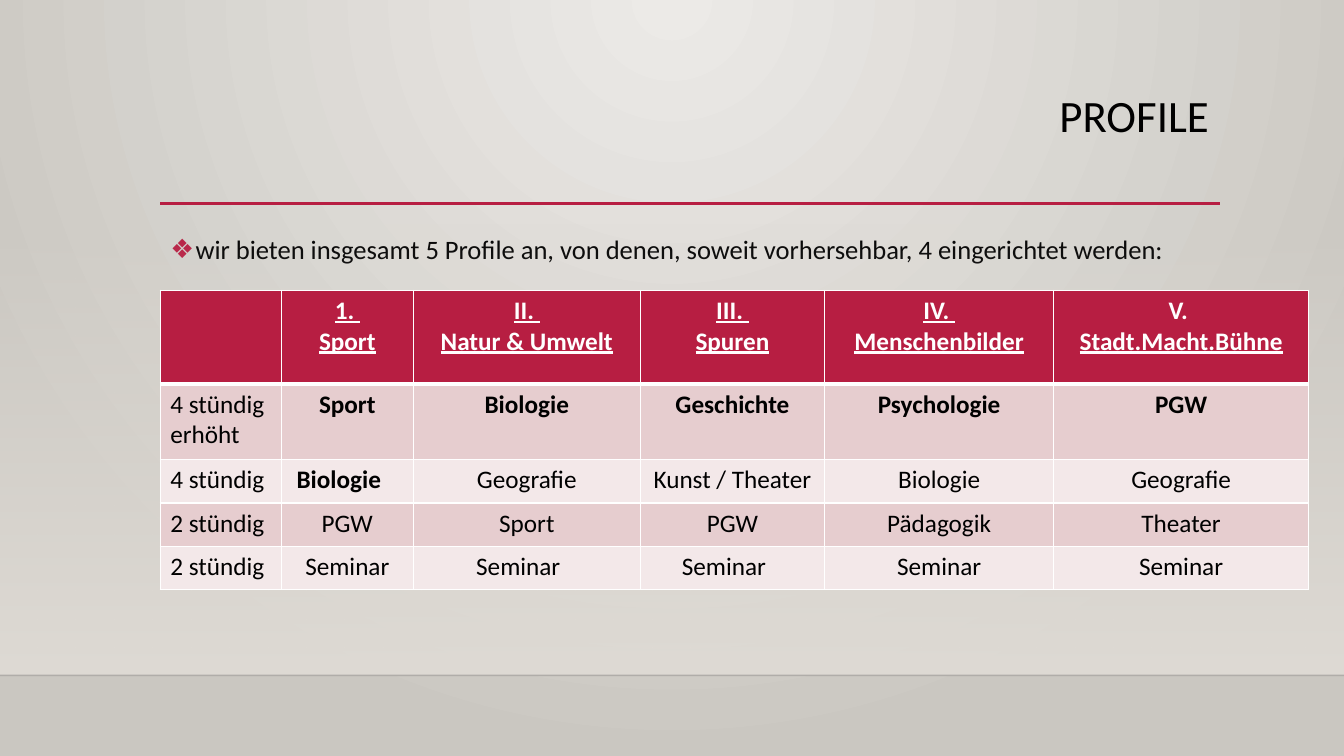
from lxml import etree
from pptx import Presentation
from pptx.dml.color import RGBColor
from pptx.enum.shapes import MSO_CONNECTOR, MSO_SHAPE
from pptx.enum.text import MSO_ANCHOR, MSO_AUTO_SIZE, PP_ALIGN
from pptx.oxml import parse_xml
from pptx.oxml.ns import nsdecls, qn
from pptx.util import Inches, Pt

STRAIGHT, RECT = MSO_CONNECTOR.STRAIGHT, MSO_SHAPE.RECTANGLE
TOP, NO_FIT = MSO_ANCHOR.TOP, MSO_AUTO_SIZE.NONE
LEFT, CENTER, RIGHT = PP_ALIGN.LEFT, PP_ALIGN.CENTER, PP_ALIGN.RIGHT

FONT = "Calibri"
RED, BLACK, WHITE = "B71E42", "000000", "FFFFFF"
BANDS = ["E6CDCF", "F3E8E9"]
WIDTH, HEIGHT, FLOOR = 13.33, 7.5, 6.7
MARGIN = 1.59

COLUMNS = [1.2, 1.31, 2.25, 1.83, 2.27, 2.53]
ROWS = [0.93, 0.75, 0.43, 0.43, 0.43]
PROFILES = [
    ["", "1. \nSport", "II. \nNatur & Umwelt", "III. \nSpuren",
     "IV. \nMenschenbilder", "V. \nStadt.Macht.Bühne"],
    ["4 stündig\nerhöht", "Sport", "Biologie", "Geschichte", "Psychologie", "PGW"],
    ["4 stündig", "Biologie", "Geografie", "Kunst / Theater", "Biologie", "Geografie"],
    ["2 stündig", "PGW", "Sport", "PGW", "Pädagogik", "Theater"],
    ["2 stündig"] + ["Seminar"] * 5,
]
SHIFTED_LEFT = {(2, 1), (4, 2), (4, 3)}


def rgb(color):
    return RGBColor.from_string(color)


def gradient(stops, direction):
    """Build a gradFill from (position, colour, opacity) stops in percent."""
    marks = "".join(
        f'<a:gs pos="{pos * 1000}"><a:srgbClr val="{color}">'
        f'<a:alpha val="{opacity * 1000}"/></a:srgbClr></a:gs>'
        for pos, color, opacity in stops)
    return parse_xml(f'<a:gradFill {nsdecls("a")} rotWithShape="1">'
                     f"<a:gsLst>{marks}</a:gsLst>{direction}</a:gradFill>")


def set_gradient(fill, holder, stops, direction):
    fill.gradient()
    holder.replace(holder.find(qn("a:gradFill")), gradient(stops, direction))


def add_run(p, text, size, color=BLACK, bold=False, underline=False):
    r = p.add_run()
    r.text = text
    r.font.name, r.font.size = FONT, Pt(size)
    r.font.bold, r.font.underline = bold, underline
    r.font.color.rgb = rgb(color)


def add_rule(s, x, y, width, color, weight, opacity=100):
    line = s.shapes.add_connector(STRAIGHT, Inches(x), Inches(y),
                                  Inches(x + width), Inches(y))
    line.line.color.rgb, line.line.width = rgb(color), Pt(weight)
    srgb = line.line._ln.find(".//" + qn("a:srgbClr"))
    etree.SubElement(srgb, qn("a:alpha"), val=str(opacity * 1000))
    etree.SubElement(line._element.spPr, qn("a:effectLst"))


def add_backdrop(s):
    fill = s.background.fill
    fill.solid()
    holder = s._element.cSld.find(qn("p:bg")).find(qn("p:bgPr"))
    set_gradient(fill, holder, [(0, "ECEAE7", 100), (100, "CAC7C1", 100)],
                 '<a:path path="circle"><a:fillToRect l="43000" t="0" '
                 'r="43000" b="100000"/></a:path>')
    wall = s.shapes.add_shape(RECT, 0, Inches(2.21), Inches(WIDTH), Inches(FLOOR - 2.21))
    wall.shadow.inherit = False
    wall.line.fill.background()
    set_gradient(wall.fill, wall._element.spPr,
                 [(0, "DFDBD5", 0), (100, "DFDBD5", 100)],
                 '<a:lin ang="5400000" scaled="0"/>')
    add_rule(s, 0, FLOOR, WIDTH, "000001", 1, opacity=20)


def place_text(sp, x, y, width, height):
    """Move a placeholder and return its first paragraph."""
    sp.left, sp.top, sp.width, sp.height = map(Inches, (x, y, width, height))
    tf = sp.text_frame
    tf.word_wrap, tf.auto_size, tf.vertical_anchor = True, NO_FIT, TOP
    p = tf.paragraphs[0]
    p.space_before = Pt(0)
    return p


def add_title(s, x, y, width, height):
    p = place_text(s.shapes.title, x, y, width, height)
    p.alignment, p.line_spacing = RIGHT, 0.9
    add_run(p, "PROFILE", 32)


def add_intro(s, x, y, width, height):
    p = place_text(s.placeholders[1], x, y, width, height)
    p.alignment, p.line_spacing = LEFT, 1.2
    pPr = p._p.get_or_add_pPr()
    pPr.set("marL", str(Inches(0.25)))
    pPr.set("indent", str(-Inches(0.25)))
    color = etree.SubElement(pPr, qn("a:buClr"))
    etree.SubElement(color, qn("a:srgbClr"), val=RED)
    etree.SubElement(pPr, qn("a:buChar"), char="❖")
    add_run(p, "wir bieten insgesamt 5 Profile an, von denen, soweit "
               "vorhersehbar, 4 eingerichtet werden:", 19)


def set_borders(cell, top, bottom):
    tcPr = cell._tc.get_or_add_tcPr()
    sides = [("L", 1), ("R", 1), ("T", top), ("B", bottom)]
    for i, (side, weight) in enumerate(sides):
        tcPr.insert(i, parse_xml(
            f'<a:ln{side} {nsdecls("a")} w="{Pt(weight)}"><a:solidFill>'
            f'<a:srgbClr val="{WHITE}"/></a:solidFill></a:ln{side}>'))


def fill_cell(cell, row, col, text):
    header = row == 0
    cell.fill.solid()
    cell.fill.fore_color.rgb = rgb(RED if header else BANDS[(row - 1) % 2])
    set_borders(cell, 3 if row == 1 else 1, 3 if header else 1)
    if (row, col) in SHIFTED_LEFT:
        cell.margin_right = Inches(0.27)
    bold = header or (col > 0 and (row == 1 or (row, col) == (2, 1)))
    for i, line in enumerate(text.split("\n") if text else []):
        tf = cell.text_frame
        p = tf.add_paragraph() if i else tf.paragraphs[0]
        p.alignment = CENTER if col else LEFT
        add_run(p, line, 18, WHITE if header else BLACK, bold,
                underline=header and line != "V. ")


def add_profile_table(s, x, y):
    table = s.shapes.add_table(len(ROWS), len(COLUMNS), Inches(x), Inches(y),
                               Inches(sum(COLUMNS)), Inches(sum(ROWS))).table
    for column, width in zip(table.columns, COLUMNS):
        column.width = Inches(width)
    for row, height in zip(table.rows, ROWS):
        row.height = Inches(height)
    for row, texts in enumerate(PROFILES):
        for col, text in enumerate(texts):
            fill_cell(table.cell(row, col), row, col, text)


def main():
    prs = Presentation()
    prs.slide_width, prs.slide_height = Inches(WIDTH), Inches(HEIGHT)
    s = prs.slides.add_slide(prs.slide_layouts[1])
    add_backdrop(s)
    add_rule(s, MARGIN, 2.02, 10.51, RED, 2.5)
    add_title(s, MARGIN, 0.88, 10.5, 1.15)
    add_intro(s, MARGIN, 2.2, 10.5, 3.77)
    add_profile_table(s, MARGIN, 2.88)
    prs.save("out.pptx")


if __name__ == "__main__":
    main()
